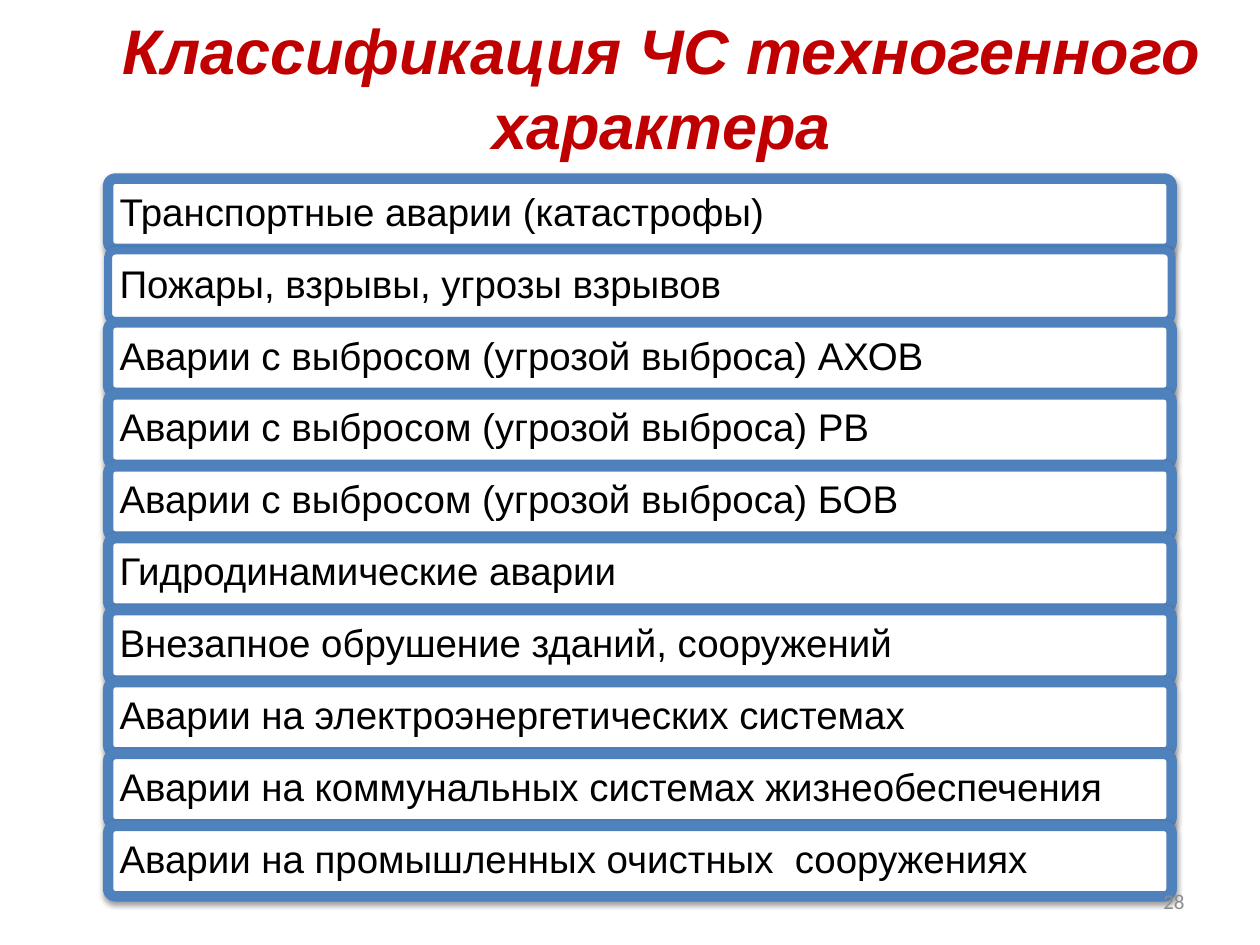
from lxml import etree
from pptx import Presentation
from pptx.dml.color import RGBColor
from pptx.enum.shapes import MSO_SHAPE
from pptx.enum.text import MSO_ANCHOR, PP_ALIGN
from pptx.oxml.ns import qn
from pptx.util import Cm, Pt

ROUNDED = MSO_SHAPE.ROUNDED_RECTANGLE
MIDDLE = MSO_ANCHOR.MIDDLE
LEFT, CENTER, RIGHT = PP_ALIGN.LEFT, PP_ALIGN.CENTER, PP_ALIGN.RIGHT
TITLE_ONLY = 5

TITLE = "Классификация ЧС техногенного характера"
ACCIDENTS = [
    ("Транспортные аварии (катастрофы)", 6),
    ("Пожары, взрывы, угрозы взрывов", 4.5),
    ("Аварии с выбросом (угрозой выброса) АХОВ", 6),
    ("Аварии с выбросом (угрозой выброса) РВ", 6),
    ("Аварии с выбросом (угрозой выброса) БОВ", 6),
    ("Гидродинамические аварии", 6),
    ("Внезапное обрушение зданий, сооружений", 6),
    ("Аварии на электроэнергетических системах", 6),
    ("Аварии на коммунальных системах жизнеобеспечения", 6),
    ("Аварии на промышленных очистных  сооружениях", 6),
]
LIST_LEFT, LIST_TOP = 2.18, 3.6
BOX_WIDTH, BOX_HEIGHT, BOX_STEP = 21.44, 1.42, 1.45


def color(value):
    return RGBColor.from_string(value)


def write_text(box, text, size, font, value, align, bold=False, italic=False):
    frame = box.text_frame
    frame.word_wrap = True
    frame.vertical_anchor = MIDDLE
    para = frame.paragraphs[0]
    para.alignment = align
    span = para.add_run()
    span.text = text
    span.font.size = Pt(size)
    span.font.name = font
    span.font.bold = bold
    span.font.italic = italic
    span.font.color.rgb = color(value)
    return para


def add_shadow(box):
    box.shadow.inherit = False
    effects = box._element.spPr.find(qn("a:effectLst"))
    shadow = etree.SubElement(effects, qn("a:outerShdw"), blurRad=str(Pt(3.1)),
                              dist=str(Pt(1.6)), dir="5400000", rotWithShape="0")
    shade = etree.SubElement(shadow, qn("a:srgbClr"), val="000000")
    etree.SubElement(shade, qn("a:alpha"), val="38000")


def add_title(page):
    title = page.shapes.title
    title.left, title.top = Cm(1.27), Cm(0.58)
    title.width, title.height = Cm(24.13), Cm(2.34)
    write_text(title, TITLE, 36, "Arial", "C00000", CENTER, True, True)


def add_accident(page, row, text, line_width):
    box = page.shapes.add_shape(ROUNDED, Cm(LIST_LEFT), Cm(LIST_TOP + row * BOX_STEP),
                                Cm(BOX_WIDTH), Cm(BOX_HEIGHT))
    box.adjustments[0] = 0.1
    box.fill.solid()
    box.fill.fore_color.rgb = color("FFFFFF")
    box.line.color.rgb = color("4F81BD")
    box.line.width = Pt(line_width)
    add_shadow(box)
    frame = box.text_frame
    frame.margin_left = frame.margin_right = Cm(0.19)
    frame.margin_top = frame.margin_bottom = Cm(0.19)
    para = write_text(box, text, 22, "Arial", "000000", LEFT)
    para.line_spacing = 0.9


def add_page_number(page):
    box = page.shapes.add_textbox(Cm(18.21), Cm(17.65), Cm(5.92), Cm(1.02))
    write_text(box, "28", 12, "Calibri", "8C8C8C", RIGHT)


def main():
    deck = Presentation()
    deck.slide_width, deck.slide_height = Cm(25.4), Cm(19.05)
    page = deck.slides.add_slide(deck.slide_layouts[TITLE_ONLY])
    add_title(page)
    for row, (text, line_width) in enumerate(ACCIDENTS):
        add_accident(page, row, text, line_width)
    add_page_number(page)
    deck.save("out.pptx")


if __name__ == "__main__":
    main()
